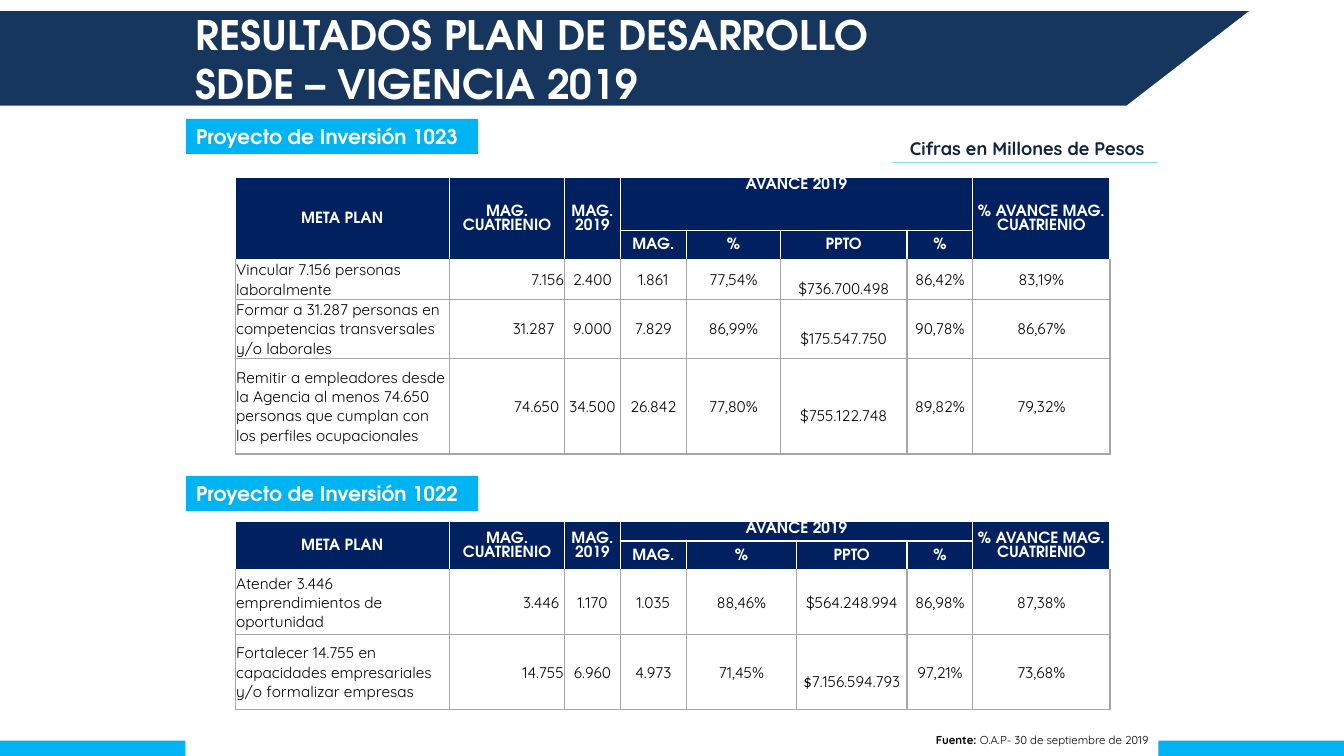
from pptx import Presentation
from pptx.dml.color import RGBColor
from pptx.enum.shapes import MSO_CONNECTOR, MSO_SHAPE
from pptx.enum.text import MSO_ANCHOR, PP_ALIGN
from pptx.oxml import parse_xml
from pptx.oxml.ns import nsdecls
from pptx.util import Pt

HEAD, BODY = "TeX Gyre Adventor", "Quicksand"
CYAN, NAVY, WHITE, GREY, BLACK = "00B3F2", "002060", "FFFFFF", "A6A6A6", "000000"


def paint(item, hue):
    item.fill.solid()
    item.fill.fore_color.rgb = RGBColor.from_string(hue)
    item.line.fill.background()
    item.shadow.inherit = False


def write(para, text, hue, form):
    run = para.add_run()
    run.text = text
    run.font.color.rgb = RGBColor.from_string(hue)
    for key, val in form.items():
        setattr(run.font, key, val)


deck = Presentation()
deck.slide_width, deck.slide_height = Pt(960), Pt(540)
slide = deck.slides.add_slide(deck.slide_layouts[5])
shapes = slide.shapes

labels = [
    (0, 529, 960, 11, CYAN, ""),
    (132.5, 518.5, 695, 21.5, WHITE, ""),
    (133, 85, 208.5, 25, CYAN, "Proyecto de Inversión 1023"),
    (133, 340, 208.5, 25, CYAN, "Proyecto de Inversión 1022"),
]
for left, top, width, height, hue, text in labels:
    box = shapes.add_shape(MSO_SHAPE.RECTANGLE, Pt(left), Pt(top), Pt(width), Pt(height))
    paint(box, hue)
    if text:
        box.text_frame.vertical_anchor = MSO_ANCHOR.MIDDLE
        para = box.text_frame.paragraphs[0]
        para.alignment = PP_ALIGN.LEFT
        write(para, text, WHITE, {"name": HEAD, "size": Pt(14.5), "bold": True})

path = shapes.build_freeform(Pt(0), Pt(8))
path.add_line_segments([(Pt(892), Pt(8)), (Pt(804.5), Pt(75.5)), (Pt(0), Pt(75.5))])
paint(path.convert_to_shape(), "17365D")

title = shapes.title
title.element.getparent().append(title.element)
spot = {"left": Pt(132.5), "top": Pt(3), "width": Pt(620), "height": Pt(77.5)}
for key, val in spot.items():
    setattr(title, key, val)
frame = title.text_frame
frame.vertical_anchor = MSO_ANCHOR.MIDDLE
for row, text in enumerate(["RESULTADOS PLAN DE DESARROLLO", "SDDE – VIGENCIA 2019"]):
    para = frame.add_paragraph() if row else frame.paragraphs[0]
    para.alignment = PP_ALIGN.LEFT
    write(para, text, WHITE, {"name": HEAD, "size": Pt(29), "bold": True})

heads = [
    ["META PLAN", "MAG. CUATRIENIO", "MAG. 2019", "AVANCE 2019", "", "", "", "% AVANCE MAG. CUATRIENIO"],
    ["", "", "", "MAG.", "%", "PPTO", "%", ""],
]
first = [
    ["Vincular 7.156 personas laboralmente",
     "7.156", "2.400", "1.861", "77,54%", "$736.700.498", "86,42%", "83,19%"],
    ["Formar a 31.287 personas en competencias transversales y/o laborales",
     "31.287", "9.000", "7.829", "86,99%", "$175.547.750", "90,78%", "86,67%"],
    ["Remitir a empleadores desde la Agencia al menos 74.650 personas que cumplan con los perfiles ocupacionales",
     "74.650", "34.500", "26.842", "77,80%", "$755.122.748", "89,82%", "79,32%"],
]
second = [
    ["Atender 3.446 emprendimientos de oportunidad",
     "3.446", "1.170", "1.035", "88,46%", "$564.248.994", "86,98%", "87,38%"],
    ["Fortalecer 14.755 en capacidades empresariales y/o formalizar empresas",
     "14.755", "6.960", "4.973", "71,45%", "$7.156.594.793", "97,21%", "73,68%"],
]
low = {"margin_top": Pt(14)}
pads = {
    "31.287": {"margin_right": Pt(7.5)},
    "74.650": {"margin_right": Pt(4)},
    "3.446": {"margin_right": Pt(4)},
    "$736.700.498": low,
    "$175.547.750": low,
    "$755.122.748": low,
    "$7.156.594.793": low,
    "AVANCE 2019": {"vertical_anchor": MSO_ANCHOR.TOP},
}
base = {
    "margin_left": Pt(0.7), "margin_right": Pt(0.7), "margin_top": Pt(0.7),
    "margin_bottom": Pt(0), "vertical_anchor": MSO_ANCHOR.MIDDLE,
}
grids = [
    (127, [37.5, 20.5, 28.5, 42, 68.5], [67, 90.5], first),
    (372.5, [14, 20.7, 45.8, 54], [78.5, 79], second),
]
for top, highs, mids, data in grids:
    wides = [153, 82.5, 39.5, 47.5, *mids, 47, 98]
    grid = shapes.add_table(len(highs), len(wides), Pt(168), Pt(top), Pt(sum(wides)), Pt(sum(highs))).table
    grid.first_row = grid.horz_banding = False
    for col, wide in zip(grid.columns, wides):
        col.width = Pt(wide)
    for line, high in zip(grid.rows, highs):
        line.height = Pt(high)
    for col in (0, 1, 2, 7):
        grid.cell(0, col).merge(grid.cell(1, col))
    grid.cell(0, 3).merge(grid.cell(0, 6))
    for row, texts in enumerate(heads + data):
        for col, text in enumerate(texts):
            cell = grid.cell(row, col)
            for key, val in (base | pads.get(text, {})).items():
                setattr(cell, key, val)
            for side in ("lnL", "lnR", "lnT", "lnB"):
                edge = WHITE if row < 2 or (row == 2 and side == "lnT") else GREY
                cell._tc.get_or_add_tcPr().append(parse_xml(
                    f'<a:{side} {nsdecls("a")} w="12700"><a:solidFill>'
                    f'<a:srgbClr val="{edge}"/></a:solidFill></a:{side}>'))
            para = cell.text_frame.paragraphs[0]
            para.alignment = PP_ALIGN.CENTER
            if row < 2:
                cell.fill.solid()
                cell.fill.fore_color.rgb = RGBColor.from_string(NAVY)
                para.line_spacing = Pt(10)
                form = {"name": HEAD, "size": Pt(11), "bold": True}
                if text:
                    write(para, text, WHITE, form)
                else:
                    para.font.size = Pt(8)
                continue
            cell.fill.background()
            if col < 2:
                para.alignment = (PP_ALIGN.LEFT, PP_ALIGN.RIGHT)[col]
            form = {"name": BODY, "size": Pt(11), "bold": False}
            if text == "$7.156.594.793":
                write(para, "$", BLACK, form | {"name": "Calibri", "size": Pt(12)})
                text = text[1:]
            write(para, text, BLACK, form)

note = shapes.add_table(1, 1, Pt(603.5), Pt(90.5), Pt(214.5), Pt(31)).table
note.first_row = note.horz_banding = False
cell = note.cell(0, 0)
cell.fill.background()
for key, val in base.items():
    setattr(cell, key, val)
para = cell.text_frame.paragraphs[0]
para.alignment = PP_ALIGN.RIGHT
write(para, "Cifras en Millones de Pesos", "0F243E", {"name": BODY, "size": Pt(13), "bold": True})

rule = shapes.add_connector(MSO_CONNECTOR.STRAIGHT, Pt(827), Pt(116), Pt(637), Pt(116))
rule.line.color.rgb = RGBColor.from_string("85DFFF")
rule.line.width = Pt(1)
rule.element.spPr.append(parse_xml(f'<a:effectLst {nsdecls("a")}/>'))

foot = shapes.add_textbox(Pt(598), Pt(520), Pt(229.5), Pt(17)).text_frame
foot.word_wrap = True
para = foot.paragraphs[0]
para.alignment = PP_ALIGN.RIGHT
for text, bold in (("Fuente: ", True), ("O.A.P- 30 de septiembre de 2019", False)):
    write(para, text, BLACK, {"name": BODY, "size": Pt(8.2), "bold": bold})

deck.save("out.pptx")
